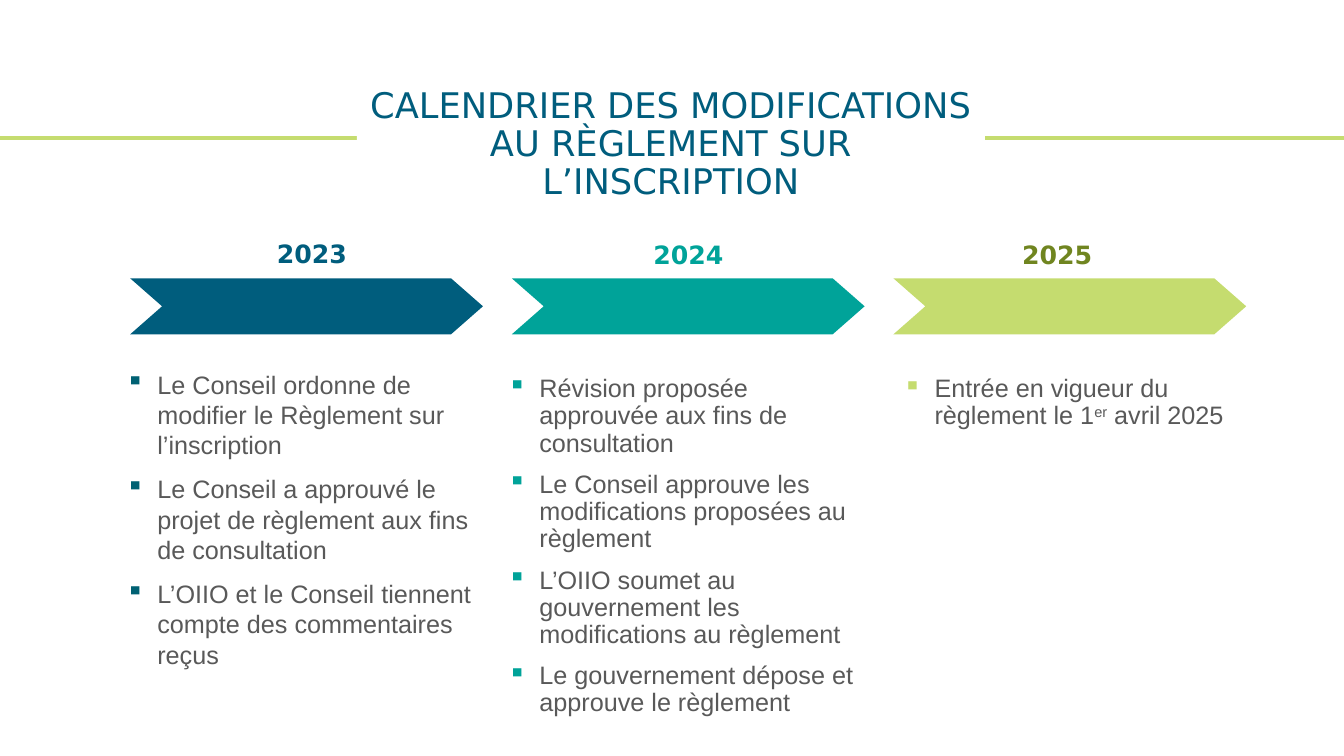
from lxml import etree
from pptx import Presentation
from pptx import util as u
from pptx.dml.color import RGBColor
from pptx.enum import shapes, text
from pptx.oxml import ns

Pt = u.Pt
NAVY = RGBColor(0x00, 0x5D, 0x7D)
DARK_TEAL = RGBColor(0x00, 0x61, 0x73)
TEAL = RGBColor(0x00, 0xA3, 0x99)
LIME = RGBColor(0xC5, 0xDC, 0x6F)
OLIVE = RGBColor(0x70, 0x85, 0x20)
GREY = RGBColor(0x59, 0x59, 0x59)
WHITE = RGBColor(0xFF, 0xFF, 0xFF)

HEADING_FONT, BODY_FONT = "DejaVu Sans", "Arial"
ARROW_LEFT, ARROW_PITCH, ARROW_TOP = 93, 272.6, 198.8
ARROW_WIDTH, ARROW_HEIGHT, ARROW_POINT = 252, 40, 22.8

# Each item is a list of (words, is_superscript) spans.
YEARS = [
    dict(year="2023", ink=NAVY, fill=NAVY, bullet=DARK_TEAL, label=(162.8, 167, 120),
         body=(82.8, 260, 273, 158), spacing=1.0, items=[
             [("Le Conseil ordonne de modifier le Règlement sur l’inscription", False)],
             [("Le Conseil a approuvé le projet de règlement aux fins de consultation", False)],
             [("L’OIIO et le Conseil tiennent compte des commentaires reçus", False)]]),
    dict(year="2024", ink=TEAL, fill=TEAL, bullet=TEAL, label=(458.7, 167.5, 66),
         body=(355.7, 265, 273, 194), spacing=0.9, items=[
             [("Révision proposée approuvée aux fins de consultation", False)],
             [("Le Conseil approuve les modifications proposées au règlement", False)],
             [("L’OIIO soumet au gouvernement les modifications au règlement", False)],
             [("Le gouvernement dépose et approuve le règlement", False)]]),
    dict(year="2025", ink=OLIVE, fill=LIME, bullet=LIME, label=(722.2, 167.5, 66),
         body=(638, 265, 252, 106), spacing=0.9, items=[
             [("Entrée en vigueur du règlement le 1", False), ("er", True),
              (" avril 2025", False)]]),
]


def style(para, size, name, color, bold=False):
    """Set the font of a whole paragraph."""
    font = para.font
    font.size, font.name, font.bold = Pt(size), name, bold
    font.color.rgb = color


def add_rule(page):
    """Draw the line that runs behind the title."""
    rule = page.shapes.add_connector(
        shapes.MSO_CONNECTOR.STRAIGHT, 0, Pt(98.6), Pt(960), Pt(98.6))
    rule.line.color.rgb = LIME
    rule.line.width = Pt(3)
    etree.SubElement(rule._element.spPr, ns.qn("a:effectLst"))


def add_title(page, words):
    """Add the title on its white panel."""
    panel = page.shapes.add_shape(
        shapes.MSO_SHAPE.RECTANGLE, Pt(254.9), Pt(67), Pt(448.6), Pt(72.7))
    panel.shadow.inherit = False
    panel.fill.solid()
    panel.fill.fore_color.rgb = WHITE
    panel.line.fill.background()
    frame = panel.text_frame
    frame.word_wrap = True
    frame.vertical_anchor = text.MSO_ANCHOR.MIDDLE
    para = frame.paragraphs[0]
    para.text = words
    para.alignment = text.PP_ALIGN.CENTER
    para.line_spacing = 0.9
    style(para, 25.2, HEADING_FONT, NAVY)


def add_frame(page, left, top, width, height):
    """Add a wrapping text box and return its text frame."""
    box = page.shapes.add_textbox(Pt(left), Pt(top), Pt(width), Pt(height))
    frame = box.text_frame
    frame.word_wrap = True
    frame.auto_size = text.MSO_AUTO_SIZE.SHAPE_TO_FIT_TEXT
    return frame


def add_year(page, year, place, color):
    """Add the year above an arrow."""
    left, top, width = place
    para = add_frame(page, left, top, width, 29).paragraphs[0]
    para.text = year
    para.alignment = text.PP_ALIGN.CENTER
    style(para, 18, HEADING_FONT, color, bold=True)


def add_arrow(page, left, color):
    """Draw a notched arrow."""
    right, middle = left + ARROW_WIDTH, ARROW_TOP + ARROW_HEIGHT / 2
    bottom = ARROW_TOP + ARROW_HEIGHT
    outline = [(right - ARROW_POINT, ARROW_TOP), (right, middle),
               (right - ARROW_POINT, bottom), (left, bottom),
               (left + ARROW_POINT, middle)]
    builder = page.shapes.build_freeform(Pt(left), Pt(ARROW_TOP))
    builder.add_line_segments([(Pt(x), Pt(y)) for x, y in outline], close=True)
    arrow = builder.convert_to_shape()
    arrow.shadow.inherit = False
    arrow.fill.solid()
    arrow.fill.fore_color.rgb = color
    arrow.line.fill.background()


def add_bullet(para, color):
    """Give a paragraph a hanging square bullet."""
    props = para._p.get_or_add_pPr()
    props.set("marL", str(Pt(22.5)))
    props.set("indent", str(-Pt(22.5)))
    tint = etree.SubElement(props, ns.qn("a:buClr"))
    etree.SubElement(tint, ns.qn("a:srgbClr"), val=str(color))
    etree.SubElement(props, ns.qn("a:buChar"), char="▪")


def add_steps(page, place, items, color, spacing):
    """Add the bulleted steps of one year."""
    frame = add_frame(page, *place)
    for index, item in enumerate(items):
        para = frame.add_paragraph() if index else frame.paragraphs[0]
        add_bullet(para, color)
        para.line_spacing = spacing
        para.space_before = Pt(10 if index else 0)
        style(para, 18, BODY_FONT, GREY)
        for words, raised in item:
            span = para.add_run()
            span.text = words
            if raised:
                span._r.get_or_add_rPr().set("baseline", "30000")


def main():
    """Build the timeline slide."""
    deck = Presentation()
    deck.slide_width, deck.slide_height = Pt(960), Pt(540)
    page = deck.slides.add_slide(deck.slide_layouts[6])
    add_rule(page)
    add_title(page, "CALENDRIER DES MODIFICATIONS AU RÈGLEMENT SUR L’INSCRIPTION")
    for index, entry in enumerate(YEARS):
        add_year(page, entry["year"], entry["label"], entry["ink"])
        add_steps(page, entry["body"], entry["items"], entry["bullet"], entry["spacing"])
        add_arrow(page, ARROW_LEFT + index * ARROW_PITCH, entry["fill"])
    deck.save("out.pptx")


if __name__ == "__main__":
    main()
